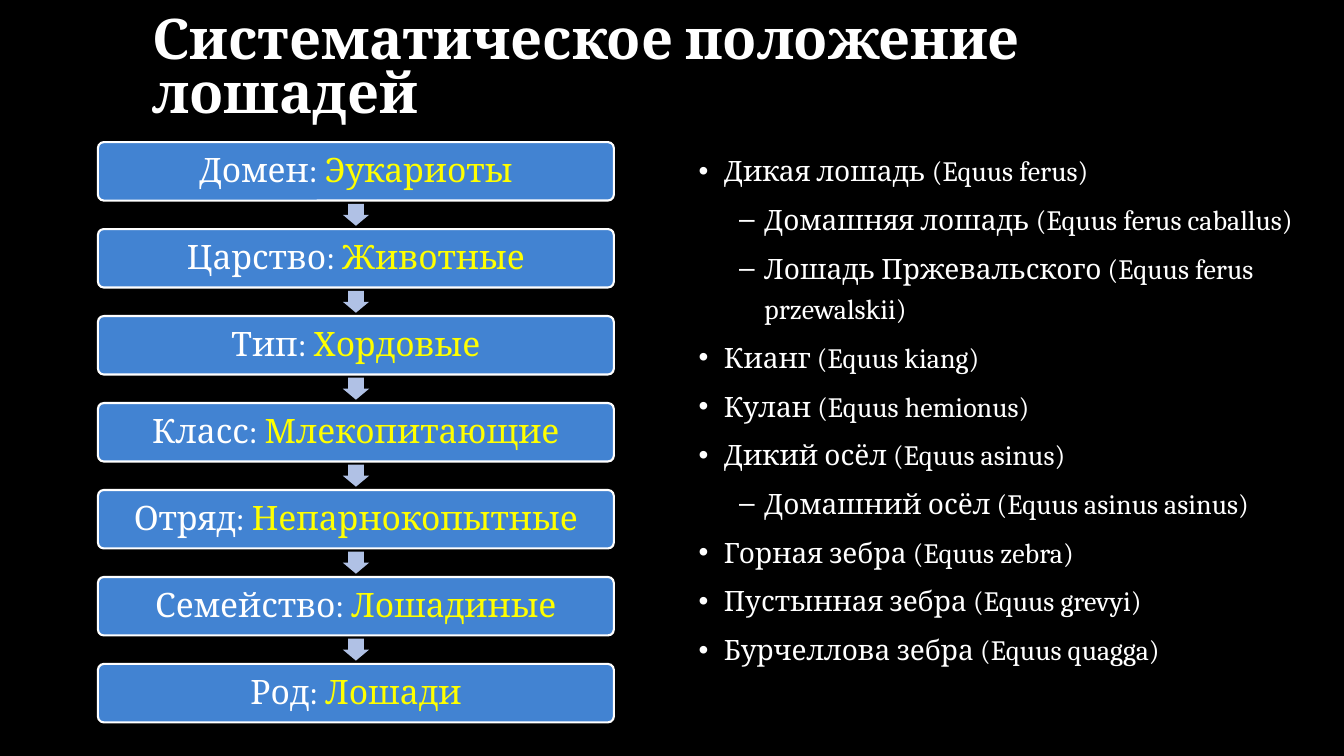
from dataclasses import dataclass

from lxml import etree
from pptx import Presentation
from pptx.dml.color import RGBColor
from pptx.enum.shapes import MSO_SHAPE
from pptx.enum.text import MSO_ANCHOR, PP_ALIGN
from pptx.oxml.ns import qn
from pptx.util import Pt

ROUNDED = MSO_SHAPE.ROUNDED_RECTANGLE
DOWN_ARROW = MSO_SHAPE.DOWN_ARROW
MIDDLE, BOTTOM = MSO_ANCHOR.MIDDLE, MSO_ANCHOR.BOTTOM
CENTER = PP_ALIGN.CENTER


@dataclass(frozen=True)
class Theme:
    font: str = "Cambria"
    background: RGBColor = RGBColor(0x00, 0x00, 0x00)
    text: RGBColor = RGBColor(0xFF, 0xFF, 0xFF)
    accent: RGBColor = RGBColor(0xFF, 0xFF, 0x00)
    box: RGBColor = RGBColor(0x42, 0x83, 0xD2)
    arrow: RGBColor = RGBColor(0xB0, 0xC1, 0xE5)
    title_size: int = 40
    rank_size: int = 24
    species_size: int = 20


THEME = Theme()

RANKS = [
    ("Домен", "Эукариоты"),
    ("Царство", "Животные"),
    ("Тип", "Хордовые"),
    ("Класс", "Млекопитающие"),
    ("Отряд", "Непарнокопытные"),
    ("Семейство", "Лошадиные"),
    ("Род", "Лошади"),
]

# Outline level and text
SPECIES = [
    (0, "Дикая лошадь (Equus ferus)"),
    (1, "Домашняя лошадь (Equus ferus caballus)"),
    (1, "Лошадь Пржевальского (Equus ferus przewalskii)"),
    (0, "Кианг (Equus kiang)"),
    (0, "Кулан (Equus hemionus)"),
    (0, "Дикий осёл (Equus asinus)"),
    (1, "Домашний осёл (Equus asinus asinus)"),
    (0, "Горная зебра (Equus zebra)"),
    (0, "Пустынная зебра (Equus grevyi)"),
    (0, "Бурчеллова зебра (Equus quagga)"),
]

# Bullet sign and left indent in points, by level
LEVELS = [("•", 18), ("–", 46.8)]


def set_font(font, size, color=THEME.text, bold=False):
    font.name = THEME.font
    font.size = Pt(size)
    font.bold = bold
    font.color.rgb = color


def add_text_frame(slide, left, top, width, height):
    frame = slide.shapes.add_textbox(Pt(left), Pt(top), Pt(width), Pt(height)).text_frame
    frame.word_wrap = True
    return frame


def add_filled_shape(slide, kind, left, top, width, height, fill):
    shape = slide.shapes.add_shape(kind, Pt(left), Pt(top), Pt(width), Pt(height))
    shape.shadow.inherit = False
    shape.fill.solid()
    shape.fill.fore_color.rgb = fill
    return shape


def add_title(slide, left, top, width, height):
    frame = add_text_frame(slide, left, top, width, height)
    frame.vertical_anchor = BOTTOM
    paragraph = frame.paragraphs[0]
    paragraph.text = "Систематическое положение лошадей"
    paragraph.line_spacing = 0.8
    set_font(paragraph.font, THEME.title_size, bold=True)


def add_rank_box(slide, left, top, width, height, rank, taxon):
    box = add_filled_shape(slide, ROUNDED, left, top, width, height, THEME.box)
    box.adjustments[0] = 0.1
    box.line.color.rgb = THEME.text
    box.line.width = Pt(1.5)
    frame = box.text_frame
    frame.word_wrap = True
    frame.vertical_anchor = MIDDLE
    paragraph = frame.paragraphs[0]
    paragraph.alignment = CENTER
    paragraph.line_spacing = 0.9
    for text, color in ((f"{rank}: ", THEME.text), (taxon, THEME.accent)):
        run = paragraph.add_run()
        run.text = text
        set_font(run.font, THEME.rank_size, color)


def add_rank_chain(slide, left, top, width, height):
    box_height, arrow_width, arrow_height = 41.75, 18.8, 15.7
    step = (height - box_height) / (len(RANKS) - 1)
    for index, (rank, taxon) in enumerate(RANKS):
        box_top = top + index * step
        # Arrow in the middle of the gap above the box
        if index:
            arrow = add_filled_shape(
                slide, DOWN_ARROW,
                left + (width - arrow_width) / 2,
                box_top - (step - box_height + arrow_height) / 2,
                arrow_width, arrow_height, THEME.arrow)
            arrow.adjustments[0] = 0.6
            arrow.adjustments[1] = 0.5
            arrow.line.fill.background()
        add_rank_box(slide, left, box_top, width, box_height, rank, taxon)


def add_species_list(slide, left, top, width, height):
    frame = add_text_frame(slide, left, top, width, height)
    for index, (level, text) in enumerate(SPECIES):
        paragraph = frame.add_paragraph() if index else frame.paragraphs[0]
        paragraph.text = text
        paragraph.level = level
        paragraph.line_spacing = 1.2
        paragraph.space_before = Pt(6 if index else 0)
        # Bullet with a hanging indent
        sign, indent = LEVELS[level]
        properties = paragraph._p.get_or_add_pPr()
        properties.set("marL", str(Pt(indent)))
        properties.set("indent", str(-Pt(18)))
        etree.SubElement(properties, qn("a:buFont")).set("typeface", "Arial")
        etree.SubElement(properties, qn("a:buChar")).set("char", sign)
        set_font(paragraph.font, THEME.species_size)


def main():
    presentation = Presentation()
    presentation.slide_width = Pt(960)
    presentation.slide_height = Pt(540)
    slide = presentation.slides.add_slide(presentation.slide_layouts[6])
    slide.background.fill.solid()
    slide.background.fill.fore_color.rgb = THEME.background

    add_title(slide, 102, 30, 756, 62)
    add_rank_chain(slide, 70, 101.5, 368.5, 414.5)
    add_species_list(slide, 492, 101.5, 442, 414.5)
    presentation.save("out.pptx")


if __name__ == "__main__":
    main()
